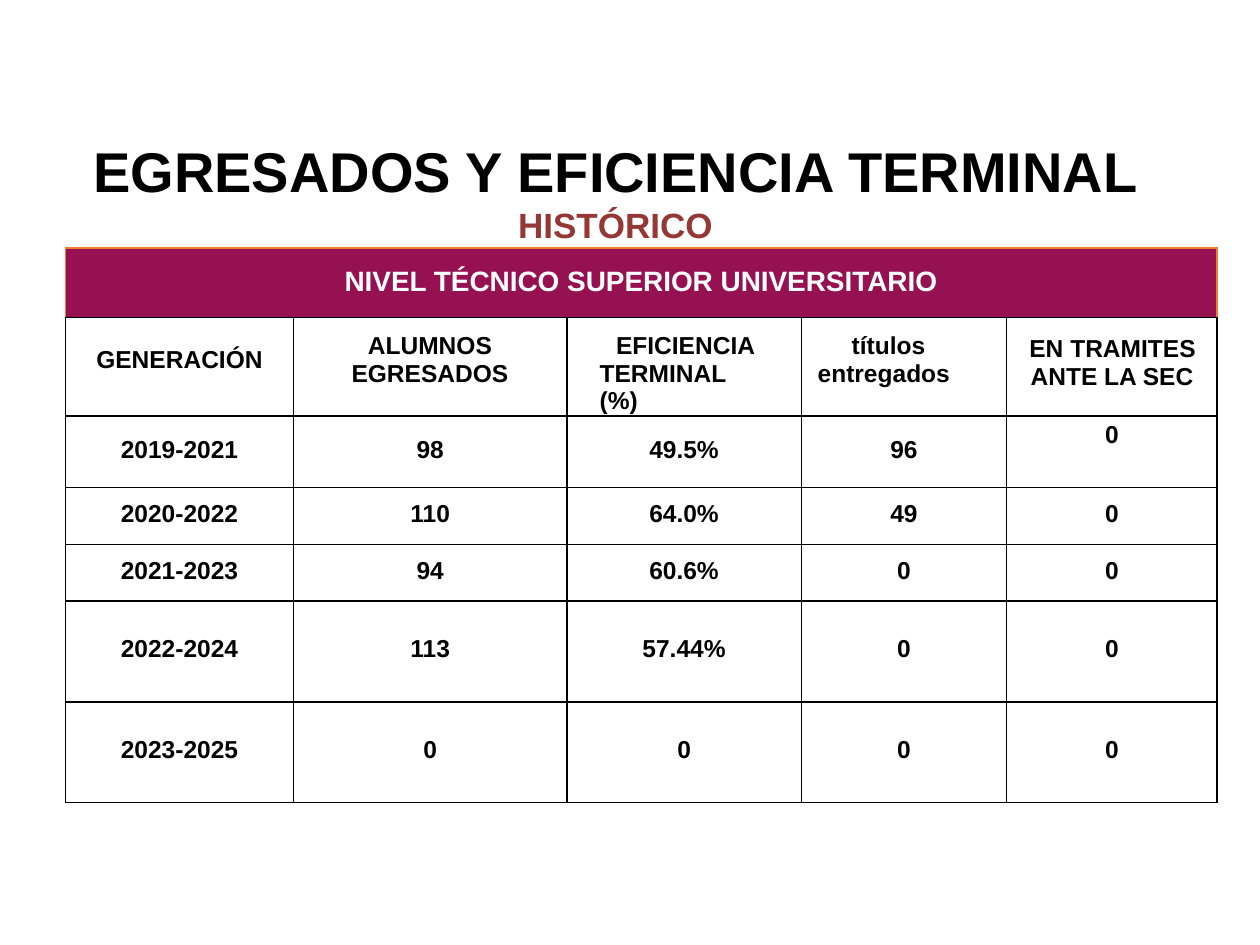
from lxml import etree
from pptx import Presentation
from pptx.dml.color import RGBColor
from pptx.enum import text
from pptx.oxml import ns
from pptx.util import Inches, Pt

TITLE = [("EGRESADOS Y EFICIENCIA TERMINAL ", 32, "000000"), ("HISTÓRICO", 20, "953735")]
BANNER = "NIVEL TÉCNICO SUPERIOR UNIVERSITARIO"
HEADERS = [
    ("GENERACIÓN", 0.23, dict(align="CENTER")),
    ("ALUMNOS EGRESADOS", 0.12, dict(left=0.46, first=0.13)),
    ("EFICIENCIA TERMINAL (%)", 0.12, dict(left=0.26, first=0.13, right=0.28)),
    ("títulos entregados", 0.12, dict(left=0.13, first=0.27)),
    ("EN TRAMITES ANTE LA SEC", 0.13, dict(left=0.19, first=-0.01, line=16.4)),
]
ROWS = [
    ("2019-2021", "98", "49.5%", "96", "0"),
    ("2020-2022", "110", "64.0%", "49", "0"),
    ("2021-2023", "94", "60.6%", "0", "0"),
    ("2022-2024", "113", "57.44%", "0", "0"),
    ("2023-2025", "0", "0", "0", "0"),
]
ROW_TOPS = [0.16, 0.1, 0.1, 0.27, 0.27]
COL_WIDTHS = [1.81, 2.17, 1.86, 1.63, 1.67]
ROW_HEIGHTS = [0.55, 0.78, 0.57, 0.45, 0.45, 0.8, 0.8]


def rgb(value):
    return RGBColor.from_string(value)


def write(p, content, size=14, color="000000", align="LEFT", left=0, first=0, right=0, line=None):
    pPr = p._p.get_or_add_pPr()
    for name, inches in (("marL", left), ("indent", first), ("marR", right)):
        pPr.set(name, str(Inches(inches)))
    p.alignment = getattr(text.PP_ALIGN, align)
    if line:
        p.line_spacing = Pt(line)
    r = p.add_run()
    r.text = content
    r.font.name, r.font.size, r.font.bold = "Arial", Pt(size), True
    r.font.color.rgb = rgb(color)


def set_borders(cell, colors):
    tcPr = cell._tc.get_or_add_tcPr()
    for i, (side, color) in enumerate(zip("LRTB", colors)):
        ln = etree.Element(ns.qn(f"a:ln{side}"), w=str(Pt(1)))
        fill = etree.SubElement(ln, ns.qn("a:solidFill"))
        etree.SubElement(fill, ns.qn("a:srgbClr"), val=color)
        tcPr.insert(i, ln)


def fill_cell(cell, content, top, **fmt):
    cell.margin_left = cell.margin_right = cell.margin_bottom = 0
    cell.margin_top = Inches(top)
    write(cell.text_frame.paragraphs[0], content, **fmt)


prs = Presentation()
prs.slide_width, prs.slide_height = Inches(10), Inches(7.5)
s = prs.slides.add_slide(prs.slide_layouts[5])

title = s.shapes.title
title.left, title.top, title.width, title.height = map(Inches, (0, 0.72, 9.48, 1.24))
tf = title.text_frame
tf.auto_size = text.MSO_AUTO_SIZE.NONE
tf.word_wrap = True
tf.vertical_anchor = text.MSO_ANCHOR.TOP
tf.margin_left = tf.margin_right = tf.margin_bottom = 0
tf.margin_top = Inches(0.36)
for content, size, color in TITLE:
    write(tf.paragraphs[0], content, size=size, color=color, align="CENTER", left=0.29)

frame = s.shapes.add_table(len(ROW_HEIGHTS), len(COL_WIDTHS), Inches(0.52), Inches(1.97),
                           Inches(sum(COL_WIDTHS)), Inches(sum(ROW_HEIGHTS)))
table = frame.table
table.first_row = table.horz_banding = False
for column, width in zip(table.columns, COL_WIDTHS):
    column.width = Inches(width)
for row, height in zip(table.rows, ROW_HEIGHTS):
    row.height = Inches(height)

for i, row in enumerate(table.rows):
    for cell in row.cells:
        if i:
            cell.fill.background()
            set_borders(cell, ["000000"] * 4)
        else:
            cell.fill.solid()
            cell.fill.fore_color.rgb = rgb("951151")
            set_borders(cell, ["EC7C30"] * 3 + ["000000"])

banner = table.cell(0, 0)
banner.merge(table.cell(0, len(COL_WIDTHS) - 1))
fill_cell(banner, BANNER, 0.14, size=16, color="FFFFFF", align="CENTER")
for c, (label, top, fmt) in enumerate(HEADERS):
    fill_cell(table.cell(1, c), label, top, **fmt)
for i, (values, top) in enumerate(zip(ROWS, ROW_TOPS)):
    for c, value in enumerate(values):
        cell_top = 0.04 if (i, c) == (0, 4) else top
        fill_cell(table.cell(i + 2, c), value, cell_top, align="CENTER")

prs.save("out.pptx")
